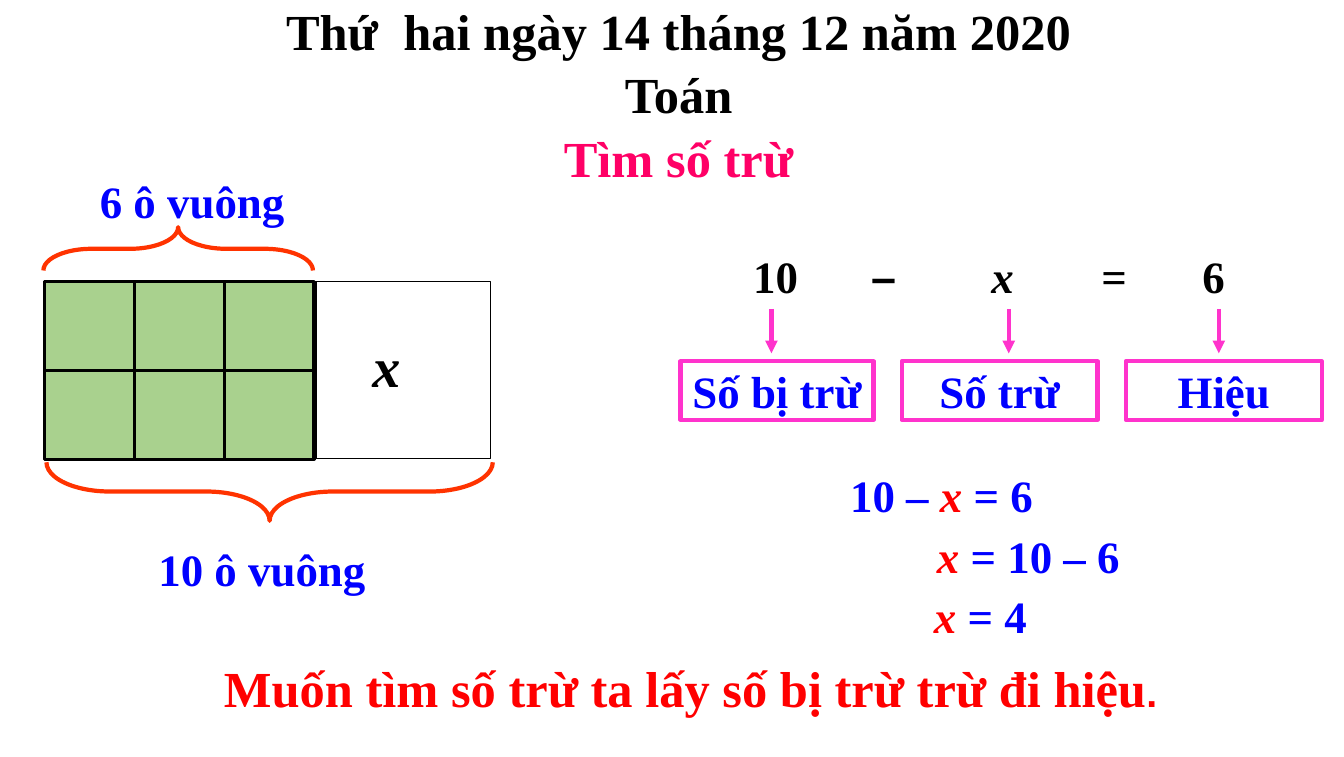
import pptx
import pptx.util
import pptx.dml.color
import pptx.enum.shapes
import pptx.enum.text
import pptx.oxml.ns
import lxml.etree

Inches, Pt = pptx.util.Inches, pptx.util.Pt
SHAPE = pptx.enum.shapes.MSO_SHAPE
ANCHOR = pptx.enum.text.MSO_ANCHOR
CENTER = pptx.enum.text.PP_ALIGN.CENTER
RGB = pptx.dml.color.RGBColor.from_string
qn = pptx.oxml.ns.qn
COLORS = {"black": "000000", "blue": "0000FF", "red": "FF0000", "rose": "FF0066",
          "pink": "FF33CC", "orange": "FF3300", "green": "A9D18E", "white": "FFFFFF"}

prs = pptx.Presentation()
prs.slide_width, prs.slide_height = Inches(13.31), Inches(7.5)
s = prs.slides.add_slide(prs.slide_layouts[6])


def add_runs(p, runs, size=32):
    """Each run is text, colour and an optional dict of font values."""
    for text, color, *extra in runs:
        r = p.add_run()
        r.text = text
        values = {"name": "Times New Roman", "size": Pt(size), "bold": True}
        for key, value in (values | (extra[0] if extra else {})).items():
            setattr(r.font, key, value)
        r.font.color.rgb = RGB(COLORS[color])


def add_outline(kind, box, line, width, fill=None):
    sp = s.shapes.add_shape(kind, *map(Inches, box))
    sp.shadow.inherit = False
    if fill:
        sp.fill.solid()
        sp.fill.fore_color.rgb = RGB(COLORS[fill])
    else:
        sp.fill.background()
    sp.line.color.rgb = RGB(COLORS[line])
    sp.line.width = Pt(width)
    return sp


# Title
tf = s.shapes.add_textbox(Inches(2.12), 0, Inches(9.2), Inches(1.75)).text_frame
tf.word_wrap, tf.margin_top = True, 0
title = [("Thứ  hai ngày 14 tháng 12 năm 2020", "black"), ("Toán", "black"), ("Tìm số trừ", "rose")]
for i, line in enumerate(title):
    p = tf.add_paragraph() if i else tf.paragraphs[0]
    p.alignment = CENTER
    if i:
        p.space_before = Pt(2)
    add_runs(p, [line], 36)

# Grid of six squares and the unknown part
for row in range(2):
    for col in range(3):
        add_outline(SHAPE.RECTANGLE, (0.44 + 0.89 * col, 2.79 + 0.88 * row, 0.89, 0.88),
                    "black", 2.25, "green")
add_outline(SHAPE.RECTANGLE, (3.13, 2.79, 1.73, 1.75), "black", 1)

# Braces above and below the grid
for box, angle, curve in [((1.55, 1.13, 0.43, 2.67), 270, 1.11), ((2.38, 2.66, 0.58, 4.42), 90, 1.08)]:
    brace = add_outline(SHAPE.RIGHT_BRACE, box, "orange", 3)
    brace.rotation = angle
    brace.adjustments[0] = curve

# Names of the terms
terms = [("Số bị trừ", 6.74, 1.91, 7.64), ("Số trừ", 8.93, 1.94, 9.99), ("Hiệu", 11.15, 1.94, 12.07)]
for name, left, width, arrow_x in terms:
    sp = add_outline(SHAPE.RECTANGLE, (left, 3.58, width, 0.58), "pink", 3, "white")
    tf = sp.text_frame
    tf.word_wrap, tf.vertical_anchor = False, ANCHOR.MIDDLE
    tf.paragraphs[0].alignment = CENTER
    add_runs(tf.paragraphs[0], [(name, "blue")])

    arrow = s.shapes.add_connector(pptx.enum.shapes.MSO_CONNECTOR.STRAIGHT,
                                   Inches(arrow_x), Inches(3.06), Inches(arrow_x), Inches(3.5))
    arrow.line.color.rgb = RGB(COLORS["pink"])
    arrow.line.width = Pt(3)
    lxml.etree.SubElement(arrow.line._get_or_add_ln(), qn("a:tailEnd"), type="triangle")
    lxml.etree.SubElement(arrow._element.spPr, qn("a:effectLst"))

# Equation, with its terms on tab stops
tf = s.shapes.add_textbox(Inches(7.36), Inches(2.41), Inches(5.7), Inches(0.64)).text_frame
tf.word_wrap = True
p = tf.paragraphs[0]
tabs = lxml.etree.SubElement(p._p.get_or_add_pPr(), qn("a:tabLst"))
for stop in (1.17, 2.36, 3.45, 4.45):
    lxml.etree.SubElement(tabs, qn("a:tab"), pos=str(Inches(stop)), algn="l")
italic = {"italic": True}
add_runs(p, [("10\t", "black"), ("–\t", "black", {"name": "Arial"}),
             ("x\t", "black", italic), ("=\t6", "black")])

# Labels, solution steps and rule
texts = [
    ((0.89, 1.67, 2.3, 0.64), 32, [("6 ô vuông", "blue")]),
    ((1.47, 5.32, 2.5, 0.64), 32, [("10 ô vuông", "blue")]),
    ((3.59, 3.23, 0.9, 0.77), 40, [("x", "black", italic)]),
    ((8.32, 4.58, 2.58, 0.64), 32, [("10 – ", "blue"), ("x ", "red", italic), ("= 6", "blue")]),
    ((9.18, 5.19, 2.58, 0.64), 32, [("x", "red", italic), (" = 10 – 6", "blue")]),
    ((9.15, 5.78, 1.4, 0.64), 32, [("x ", "red", italic), ("= 4", "blue")]),
    ((2.12, 6.46, 9.8, 0.71), 36, [("Muốn tìm số trừ ta lấy số bị trừ trừ đi hiệu", "red"),
                                   (".", "red", {"name": "Arial", "size": Pt(28)})]),
]
for box, size, runs in texts:
    tf = s.shapes.add_textbox(*map(Inches, box)).text_frame
    tf.word_wrap = True
    add_runs(tf.paragraphs[0], runs, size)

prs.save("out.pptx")
